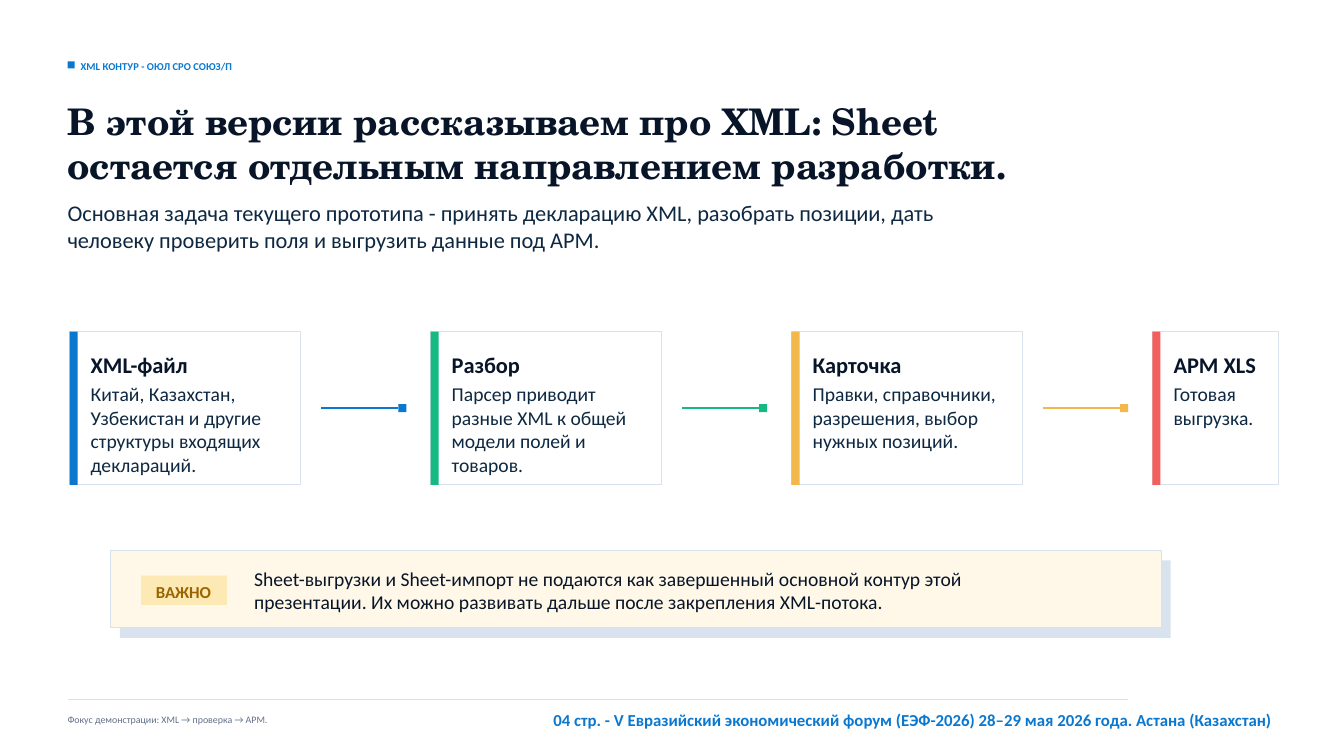
"""Build the slide about the XML flow, from incoming file to finished export."""
from dataclasses import dataclass

from lxml import etree
from pptx import Presentation
from pptx.dml.color import RGBColor
from pptx.enum.shapes import MSO_CONNECTOR, MSO_SHAPE
from pptx.enum.text import PP_ALIGN
from pptx.oxml.ns import qn
from pptx.util import Inches, Pt

RECTANGLE = MSO_SHAPE.RECTANGLE
STRAIGHT = MSO_CONNECTOR.STRAIGHT
LEFT, CENTER, RIGHT = PP_ALIGN.LEFT, PP_ALIGN.CENTER, PP_ALIGN.RIGHT
LEFT_SIDE = 1


@dataclass(frozen=True)
class Theme:
    """Colours, fonts and type sizes."""
    blue: str = "0B78D0"
    green: str = "15B981"
    amber: str = "F2B84B"
    red: str = "F25F5C"
    ink: str = "081529"
    body: str = "0E2841"
    muted: str = "637089"
    border: str = "D7E2EF"
    shadow: str = "D9E2EF"
    white: str = "FFFFFF"
    cream: str = "FFF8E8"
    badge: str = "FDE9B4"
    badge_text: str = "9A6500"
    sans: str = "Calibri"
    serif: str = "TeX Gyre Schola"
    title_size: float = 26.2
    lead_size: float = 16
    body_size: float = 14
    label_size: float = 12
    kicker_size: float = 7.5
    note_size: float = 7.1


THEME = Theme()

KICKER = "XML КОНТУР - ОЮЛ СРО СОЮЗ/П"
TITLE = "В этой версии рассказываем про XML: Sheet остается отдельным направлением разработки."
LEAD = ("Основная задача текущего прототипа - принять декларацию XML, разобрать позиции, "
        "дать человеку проверить поля и выгрузить данные под АРМ.")
STEPS = [
    ("XML-файл", "Китай, Казахстан, Узбекистан и другие структуры входящих деклараций.", THEME.blue, 2.29),
    ("Разбор", "Парсер приводит разные XML к общей модели полей и товаров.", THEME.green, 2.29),
    ("Карточка", "Правки, справочники, разрешения, выбор нужных позиций.", THEME.amber, 2.29),
    ("АРМ XLS", "Готовая выгрузка.", THEME.red, 1.25),
]
BADGE = "ВАЖНО"
NOTICE = ("Sheet-выгрузки и Sheet-импорт не подаются как завершенный основной контур этой "
          "презентации. Их можно развивать дальше после закрепления XML-потока.")
FOCUS = "Фокус демонстрации: XML → проверка → АРМ."
FOOTER = ("04 стр. - V Евразийский экономический форум (ЕЭФ-2026) "
          "28–29 мая 2026 года. Астана (Казахстан)")

MARGIN = 0.67
CARD_LEFT, CARD_TOP, CARD_HEIGHT, CARD_PITCH = 0.69, 3.29, 1.52, 3.58
STRIPE, TEXT_INSET, TEXT_TRIM = 0.08, 0.21, 0.35
ARROW_OFFSET, ARROW_LENGTH, ARROW_END = 2.49, 0.85, 0.08
NOTICE_LEFT, NOTICE_TOP, NOTICE_WIDTH, NOTICE_HEIGHT = 1.1, 5.46, 10.42, 0.77


def add_box(page, left, top, width, height, fill, border=None):
    """Add a flat rectangle."""
    box = page.shapes.add_shape(RECTANGLE, Inches(left), Inches(top), Inches(width), Inches(height))
    box.shadow.inherit = False
    box.fill.solid()
    box.fill.fore_color.rgb = RGBColor.from_string(fill)
    if border:
        box.line.color.rgb = RGBColor.from_string(border)
        box.line.width = Pt(0.75)
    else:
        box.line.fill.background()
    return box


def add_text(page, text, left, top, width, height, size=THEME.body_size, color=THEME.body,
             bold=False, font=THEME.sans, align=LEFT):
    """Add a wrapped text box without insets."""
    box = page.shapes.add_textbox(Inches(left), Inches(top), Inches(width), Inches(height))
    frame = box.text_frame
    frame.word_wrap = True
    frame.margin_left = frame.margin_right = frame.margin_top = frame.margin_bottom = 0
    para = frame.paragraphs[0]
    para.alignment = align
    span = para.add_run()
    span.text = text
    span.font.name = font
    span.font.size = Pt(size)
    span.font.bold = bold
    span.font.color.rgb = RGBColor.from_string(color)


def add_line(page, left, y, width, color, weight):
    """Add a horizontal line."""
    line = page.shapes.add_connector(STRAIGHT, Inches(left), Inches(y), Inches(left + width), Inches(y))
    line.line.color.rgb = RGBColor.from_string(color)
    line.line.width = Pt(weight)
    etree.SubElement(line._element.spPr, qn("a:effectLst"))
    return line


def add_card(page, left, heading, details, color, width):
    """Add one step of the flow."""
    add_box(page, left, CARD_TOP, width, CARD_HEIGHT, THEME.white, THEME.border)
    add_box(page, left, CARD_TOP, STRIPE, CARD_HEIGHT, color)
    text_left, text_width = left + TEXT_INSET, width - TEXT_TRIM
    add_text(page, heading, text_left, CARD_TOP + 0.19, text_width, 0.25,
             size=THEME.lead_size, color=THEME.ink, bold=True)
    add_text(page, details, text_left, CARD_TOP + 0.5, text_width, 0.92)


def add_arrow(page, left, color):
    """Add a line that ends in a small square."""
    middle = CARD_TOP + CARD_HEIGHT / 2
    reach = ARROW_LENGTH - ARROW_END
    end = add_box(page, left + reach, middle - ARROW_END / 2, ARROW_END, ARROW_END, color)
    add_line(page, left, middle, reach, color, 1.5).end_connect(end, LEFT_SIDE)


def add_header(page):
    """Add the kicker, the title and the lead."""
    add_box(page, MARGIN, 0.61, 0.07, 0.07, THEME.blue)
    add_text(page, KICKER, 0.8, 0.59, 3.75, 0.19, size=THEME.kicker_size, color=THEME.blue, bold=True)
    add_text(page, TITLE, MARGIN, 0.98, 9.69, 0.96, size=THEME.title_size, color=THEME.ink,
             bold=True, font=THEME.serif)
    add_text(page, LEAD, MARGIN, 1.98, 8.85, 0.52, size=THEME.lead_size)


def add_flow(page):
    """Add the cards and the arrows between them."""
    for index, (heading, details, color, width) in enumerate(STEPS):
        left = CARD_LEFT + index * CARD_PITCH
        add_card(page, left, heading, details, color, width)
        if index < len(STEPS) - 1:
            add_arrow(page, left + ARROW_OFFSET, color)


def add_notice(page):
    """Add the highlighted notice with its badge."""
    add_box(page, NOTICE_LEFT + 0.09, NOTICE_TOP + 0.1, NOTICE_WIDTH, NOTICE_HEIGHT, THEME.shadow)
    add_box(page, NOTICE_LEFT, NOTICE_TOP, NOTICE_WIDTH, NOTICE_HEIGHT, THEME.cream, THEME.border)
    add_box(page, 1.4, 5.71, 0.85, 0.29, THEME.badge)
    add_text(page, BADGE, 1.52, 5.77, 0.6, 0.15, size=THEME.label_size, color=THEME.badge_text,
             bold=True, align=CENTER)
    add_text(page, NOTICE, 2.52, 5.62, 8.02, 0.4, color=THEME.ink)


def add_footer(page):
    """Add the rule and both footer texts."""
    add_line(page, MARGIN, 6.94, 10.52, THEME.border, 0.75)
    add_text(page, FOCUS, MARGIN, 7.08, 7.92, 0.19, size=THEME.note_size, color=THEME.muted)
    add_text(page, FOOTER, 5.04, 7.04, 7.58, 0.25, size=THEME.label_size, color=THEME.blue,
             bold=True, align=RIGHT)


def main():
    """Build and save the deck."""
    deck = Presentation()
    deck.slide_width, deck.slide_height = Inches(13.33), Inches(7.5)
    page = deck.slides.add_slide(deck.slide_layouts[6])
    add_header(page)
    add_flow(page)
    add_notice(page)
    add_footer(page)
    deck.save("out.pptx")


if __name__ == "__main__":
    main()
